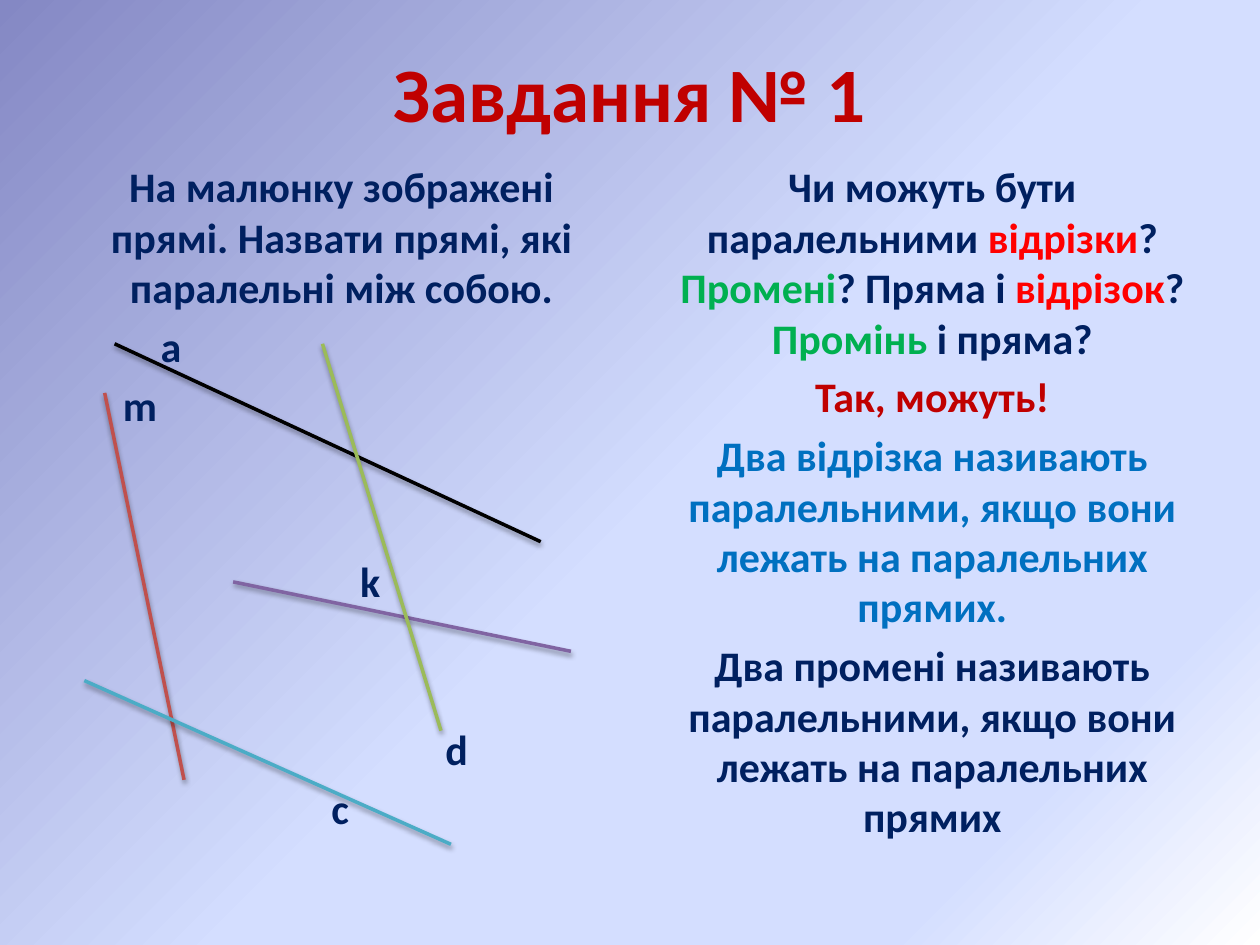
from lxml.etree import SubElement
from pptx import Presentation
from pptx.dml.color import RGBColor
from pptx.enum.shapes import MSO_CONNECTOR
from pptx.enum.text import MSO_ANCHOR, PP_ALIGN
from pptx.oxml.ns import qn
from pptx.util import Cm, Pt

NAVY, RED, CRIMSON, GREEN, BLUE = "002060", "FF0000", "C00000", "00B050", "0070C0"
BACKGROUND_STOPS = [(0, "8488C4"), (53, "D4DEFF"), (83, "D4DEFF"), (100, "FFFFFF")]
PARAGRAPH_GAP = 4.8

TASK = "На малюнку зображені прямі. Назвати прямі, які паралельні між собою."
LINE_LABELS = [
    ("а", 1.72, PARAGRAPH_GAP),
    ("m", 0.96, PARAGRAPH_GAP),
    ("k", 5.74, 72),
    ("d", 7.46, 67.2),
    ("c", 5.16, PARAGRAPH_GAP),
]
QUESTION = [
    ("Чи можуть бути паралельними ", NAVY),
    ("відрізки", RED),
    ("? ", NAVY),
    ("Промені", GREEN),
    ("? Пряма і ", NAVY),
    ("відрізок", RED),
    ("? ", NAVY),
    ("Промінь", GREEN),
    (" і пряма?", NAVY),
]
ANSWERS = [
    ("Так, можуть!", CRIMSON),
    ("Два відрізка називають паралельними, якщо вони лежать на паралельних прямих.", BLUE),
    ("Два промені називають паралельними, якщо вони лежать на паралельних прямих", NAVY),
]
DRAWN_LINES = [
    ((2.31, 6.93), (10.9, 10.92), "000000"),
    ((2.11, 7.92), (3.71, 15.72), "C0504D"),
    ((4.7, 11.73), (11.51, 13.13), "8064A2"),
    ((6.5, 6.93), (8.89, 14.73), "9BBB59"),
    ((1.7, 13.72), (9.09, 17.02), "4BACC6"),
]


def color(value):
    return RGBColor.from_string(value)


def paint_background(slide):
    fill = slide.background.fill
    fill.gradient()
    fill.gradient_angle = 315
    stops = next(slide.element.iter(qn("a:gsLst")))
    for default_stop in list(stops):
        stops.remove(default_stop)
    for percent, value in BACKGROUND_STOPS:
        stop = SubElement(stops, qn("a:gs"), pos=str(percent * 1000))
        SubElement(stop, qn("a:srgbClr"), val=value)


def write(paragraph, text, size=24, fill=NAVY, align=PP_ALIGN.CENTER, before=PARAGRAPH_GAP, indent=0):
    paragraph.alignment = align
    paragraph.space_before = Pt(before)
    if indent:
        properties = paragraph._p.get_or_add_pPr()
        properties.set("marL", str(Cm(indent)))
        properties.set("indent", "0")
    run = paragraph.add_run()
    run.text = text
    run.font.name = "Calibri"
    run.font.size = Pt(size)
    run.font.bold = True
    run.font.color.rgb = color(fill)


def add_title(slide, text):
    title = slide.shapes.title
    title.left, title.top, title.width, title.height = Cm(1.27), Cm(0.76), Cm(22.86), Cm(2.16)
    title.text_frame.vertical_anchor = MSO_ANCHOR.MIDDLE
    write(title.text_frame.paragraphs[0], text, size=44, fill=CRIMSON, before=0)


def add_column(slide, left, width, height):
    column = slide.shapes.add_textbox(Cm(left), Cm(3.12), Cm(width), Cm(height)).text_frame
    column.word_wrap = True
    return column


def add_drawn_line(slide, start, end, stroke):
    line = slide.shapes.add_connector(MSO_CONNECTOR.STRAIGHT, *map(Cm, start + end))
    line.line.color.rgb = color(stroke)
    line.line.width = Pt(2)
    effects = SubElement(line._element.spPr, qn("a:effectLst"))
    shadow = SubElement(effects, qn("a:outerShdw"), blurRad=str(Pt(3.1)), dist=str(Pt(1.6)),
                        dir="5400000", rotWithShape="0")
    tint = SubElement(shadow, qn("a:srgbClr"), val="000000")
    SubElement(tint, qn("a:alpha"), val="38000")


def main():
    presentation = Presentation()
    presentation.slide_width, presentation.slide_height = Cm(25.4), Cm(19.05)
    slide = presentation.slides.add_slide(presentation.slide_layouts[5])
    paint_background(slide)
    add_title(slide, "Завдання № 1")

    task = add_column(slide, 1.27, 11.23, 13.89)
    write(task.paragraphs[0], TASK)
    for label, indent, before in LINE_LABELS:
        write(task.add_paragraph(), label, align=PP_ALIGN.LEFT, before=before, indent=indent)

    discussion = add_column(slide, 12.9, 11.79, 15.01)
    for text, fill in QUESTION:
        write(discussion.paragraphs[0], text, fill=fill)
    for text, fill in ANSWERS:
        write(discussion.add_paragraph(), text, fill=fill)

    for start, end, stroke in DRAWN_LINES:
        add_drawn_line(slide, start, end, stroke)
    presentation.save("out.pptx")


if __name__ == "__main__":
    main()
